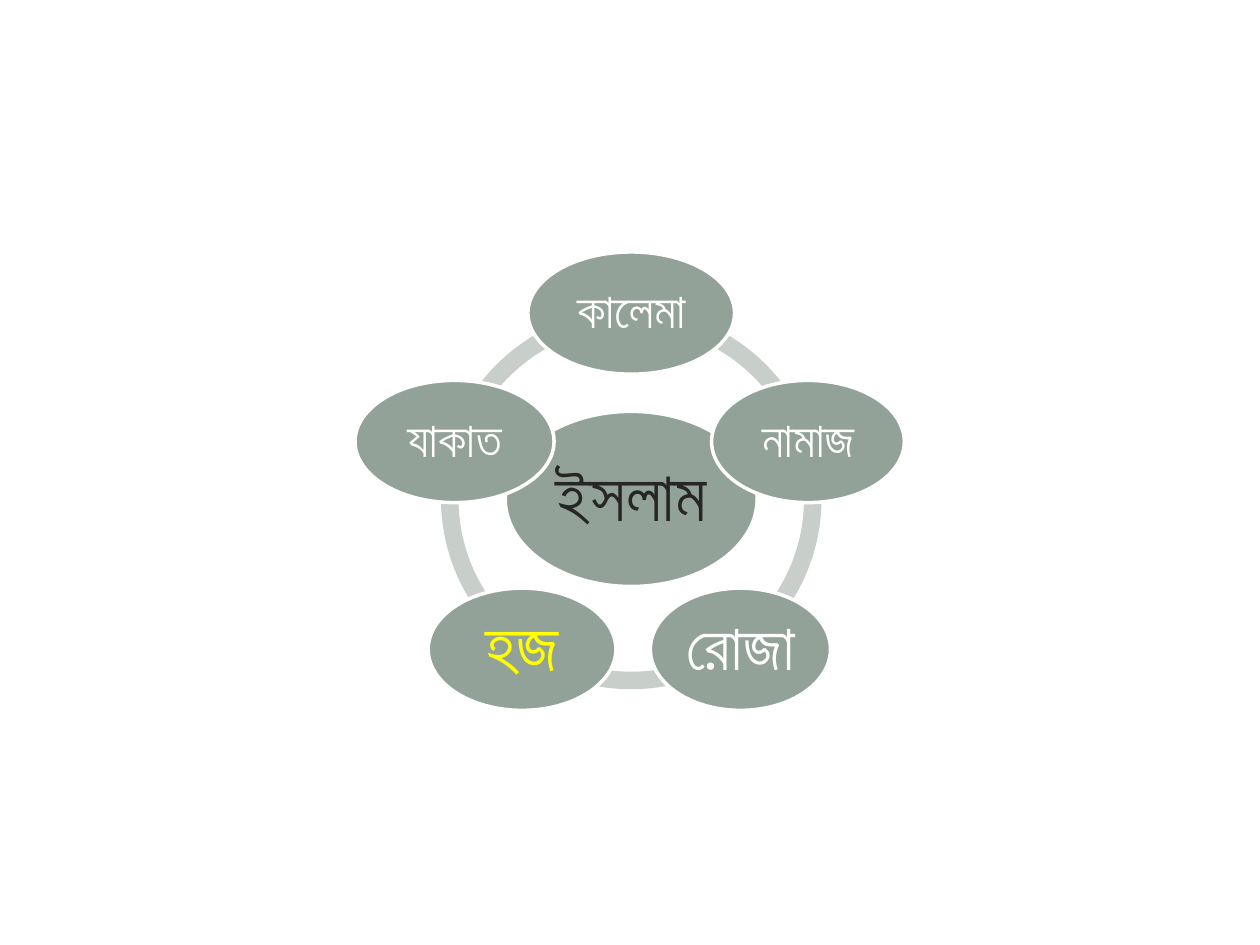
from dataclasses import dataclass
from math import cos, radians, sin

from pptx import Presentation
from pptx.dml.color import RGBColor
from pptx.enum.shapes import MSO_SHAPE
from pptx.enum.text import MSO_ANCHOR, PP_ALIGN
from pptx.util import Inches, Pt


@dataclass(frozen=True)
class Theme:
    font: str = "Arial"
    sage: str = "93A299"
    band: str = "C8CECA"
    white: str = "FFFFFF"
    dark: str = "262626"
    gold: str = "FFFF00"
    small: int = 28
    mid: int = 37
    large: int = 40
    edge: int = 2


THEME = Theme()
WIDE, HIGH = 10, 7.5
HUB = (0.501 * WIDE, 0.528 * HIGH)
ORBIT = 1.475
RING = 3.02
BAND = 0.046
NODE = 0.97
STEP = 72
TOP = 270

# Word, ellipse width, type size, text colour, inset; clockwise from the top
PILLARS = [
    ("কালেমা", 1.64, THEME.small, THEME.white, 0.04),
    ("নামাজ", 1.53, THEME.small, THEME.white, 0.04),
    ("রোজা", 1.43, THEME.mid, THEME.white, 0.05),
    ("হজ", 1.49, THEME.large, THEME.gold, 0.06),
    ("যাকাত", 1.58, THEME.small, THEME.white, 0.04),
]


def apply(target, values):
    for name, value in values.items():
        setattr(target, name, value)


def shape(slide, kind, mid, size, fill):
    """Add a plain filled shape centred on a point."""
    left, top = (m - s / 2 for m, s in zip(mid, size))
    item = slide.shapes.add_shape(kind, *map(Inches, (left, top, *size)))
    item.shadow.inherit = False
    item.fill.solid()
    item.fill.fore_color.rgb = RGBColor.from_string(fill)
    item.line.fill.background()
    return item


def arc(slide, start):
    item = shape(slide, MSO_SHAPE.BLOCK_ARC, HUB, (RING, RING), THEME.band)
    # An angle adjustment is in 60000ths of a degree, scaled by 100000
    turns = [angle % 360 * 0.6 for angle in (start, start + STEP)]
    for spot, value in enumerate((*turns, BAND)):
        item.adjustments[spot] = value


def oval(slide, mid, size, word, points, color, inset):
    item = shape(slide, MSO_SHAPE.OVAL, mid, size, THEME.sage)
    item.line.color.rgb = RGBColor.from_string(THEME.white)
    item.line.width = Pt(THEME.edge)
    frame = item.text_frame
    apply(frame, {"word_wrap": True, "vertical_anchor": MSO_ANCHOR.MIDDLE})
    apply(frame, {f"margin_{side}": Inches(inset)
                  for side in ("left", "top", "right", "bottom")})
    para = frame.paragraphs[0]
    apply(para, {"alignment": PP_ALIGN.CENTER, "line_spacing": 0.9,
                 "space_after": Pt(0.35 * points)})
    run = para.add_run()
    run.text = word
    apply(run.font, {"name": THEME.font, "size": Pt(points)})
    run.font.color.rgb = RGBColor.from_string(color)


def main():
    deck = Presentation()
    apply(deck, {"slide_width": Inches(WIDE), "slide_height": Inches(HIGH)})
    slide = deck.slides.add_slide(deck.slide_layouts[6])
    angles = [TOP + STEP * n for n in range(len(PILLARS))]
    for angle in angles:
        arc(slide, angle)
    oval(slide, HUB, (2, 1.39), "ইসলাম", THEME.large, THEME.dark, 0.06)
    for angle, (word, width, *style) in zip(angles, PILLARS):
        turn = radians(angle)
        mid = (HUB[0] + ORBIT * cos(turn), HUB[1] + ORBIT * sin(turn))
        oval(slide, mid, (width, NODE), word, *style)
    deck.save("out.pptx")


if __name__ == "__main__":
    main()
